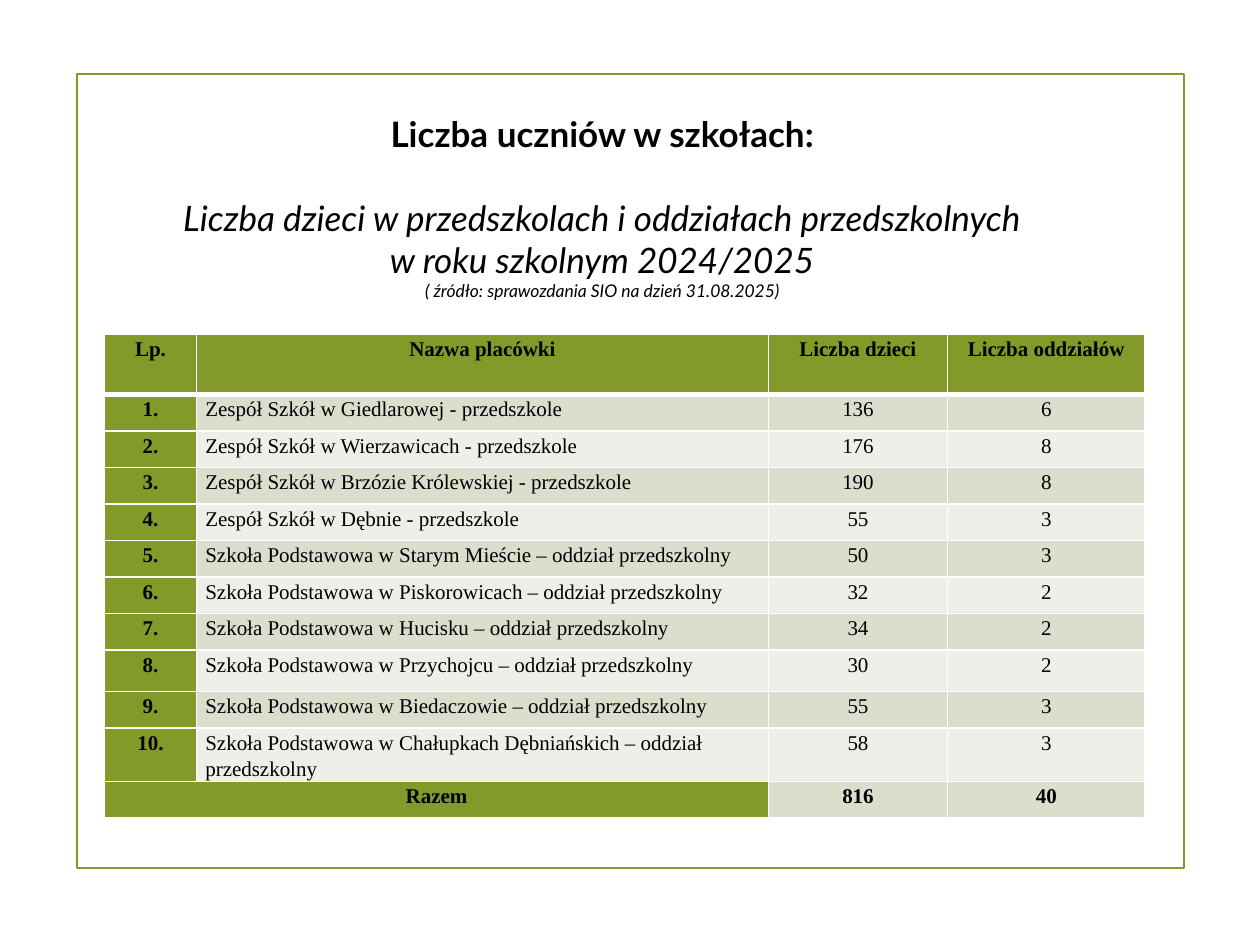
"""Build a slide listing children and groups in preschools for 2024/2025."""
from lxml import etree
from pptx import Presentation
from pptx import util as u
from pptx.dml.color import RGBColor
from pptx.enum import shapes, text
from pptx.oxml import ns

GREEN = RGBColor(0x83, 0x99, 0x2A)
SAGE = RGBColor(0xD9, 0xDE, 0xCD)
PALE = RGBColor(0xED, 0xEF, 0xE8)
BLACK = RGBColor(0, 0, 0)
WHITE = RGBColor(0xFF, 0xFF, 0xFF)

HEADER = ["Lp.", "Nazwa placówki", "Liczba dzieci", "Liczba oddziałów"]
PRESCHOOLS = [
    ("Zespół Szkół w Giedlarowej - przedszkole", 136, 6),
    ("Zespół Szkół w Wierzawicach - przedszkole", 176, 8),
    ("Zespół Szkół w Brzózie Królewskiej - przedszkole", 190, 8),
    ("Zespół Szkół w Dębnie - przedszkole", 55, 3),
    ("Szkoła Podstawowa w Starym Mieście – oddział przedszkolny", 50, 3),
    ("Szkoła Podstawowa w Piskorowicach – oddział przedszkolny", 32, 2),
    ("Szkoła Podstawowa w Hucisku – oddział przedszkolny", 34, 2),
    ("Szkoła Podstawowa w Przychojcu – oddział przedszkolny", 30, 2),
    ("Szkoła Podstawowa w Biedaczowie – oddział przedszkolny", 55, 3),
    ("Szkoła Podstawowa w Chałupkach Dębniańskich – oddział przedszkolny", 58, 3),
]
TOTALS = ["Razem", "", sum(p[1] for p in PRESCHOOLS), sum(p[2] for p in PRESCHOOLS)]
HEADING = [
    ("Liczba uczniów w szkołach:", 20, True, 0),
    ("Liczba dzieci w przedszkolach i oddziałach przedszkolnych", 20, False, 24),
    ("w roku szkolnym 2024/2025", 20, False, 0),
    ("( źródło: sprawozdania SIO na dzień 31.08.2025)", 10, False, 0),
]


def format_paragraph(para, font, size, bold, italic=False):
    para.alignment = text.PP_ALIGN.CENTER
    para.font.name = font
    para.font.size = u.Pt(size)
    para.font.bold = bold
    para.font.italic = italic
    para.font.color.rgb = BLACK


def add_borders(cell, top, bottom):
    properties = cell._tc.get_or_add_tcPr()
    sides = [("lnL", 1), ("lnR", 1), ("lnT", top), ("lnB", bottom)]
    for position, (side, width) in enumerate(sides):
        line = etree.Element(ns.qn(f"a:{side}"), w=str(u.Pt(width)))
        fill = etree.SubElement(line, ns.qn("a:solidFill"))
        etree.SubElement(fill, ns.qn("a:srgbClr"), val=str(WHITE))
        properties.insert(position, line)


deck = Presentation()
deck.slide_width, deck.slide_height = u.Inches(10), u.Inches(7.5)
page = deck.slides.add_slide(deck.slide_layouts[5])

frame = page.shapes.add_shape(
    shapes.MSO_SHAPE.RECTANGLE, u.Inches(0.61), u.Inches(0.59), u.Inches(8.79), u.Inches(6.3))
frame.shadow.inherit = False
frame.fill.background()
frame.line.color.rgb = GREEN
frame.line.width = u.Pt(1.25)

title = page.shapes.title
title.element.addprevious(frame.element)
title.left, title.top = u.Inches(0.45), u.Inches(0.04)
title.width, title.height = u.Inches(8.66), u.Inches(3.23)
box = title.text_frame
box.word_wrap = True
box.auto_size = text.MSO_AUTO_SIZE.NONE
box.vertical_anchor = text.MSO_ANCHOR.TOP
box.margin_top = u.Inches(0.85)
box.text = "\n".join(line[0] for line in HEADING)
for para, (_, size, bold, space) in zip(box.paragraphs, HEADING):
    format_paragraph(para, "Lato", size, bold, italic=not bold)
    para.space_before = u.Pt(space)

rows = [HEADER]
rows += [(f"{number}.", *school) for number, school in enumerate(PRESCHOOLS, 1)]
rows.append(TOTALS)
last = len(rows) - 1
table = page.shapes.add_table(
    len(rows), 4, u.Inches(0.83), u.Inches(2.65), u.Inches(8.27), u.Inches(3.72)).table
for column, width in zip(table.columns, [0.73, 4.54, 1.42, 1.57]):
    column.width = u.Inches(width)
for row, height in zip(table.rows, [0.48] + [0.29] * 7 + [0.33, 0.29, 0.31, 0.29]):
    row.height = u.Inches(height)
table.cell(last, 0).merge(table.cell(last, 1))

for r, values in enumerate(rows):
    for c, value in enumerate(values):
        cell = table.cell(r, c)
        cell.text = str(value)
        cell.margin_left = cell.margin_right = u.Inches(0.07)
        cell.margin_top = cell.margin_bottom = 0
        para = cell.text_frame.paragraphs[0]
        format_paragraph(para, "Times New Roman", 12, c == 0 or r in (0, last))
        para.line_spacing = 1.15
        if c == 1 and 0 < r < last:
            para.alignment = text.PP_ALIGN.LEFT
        cell.fill.solid()
        cell.fill.fore_color.rgb = GREEN if r == 0 or c == 0 else SAGE if r % 2 else PALE
        add_borders(cell, top=3 if r == 1 else 1, bottom=3 if r == 0 else 1)

deck.save("out.pptx")
